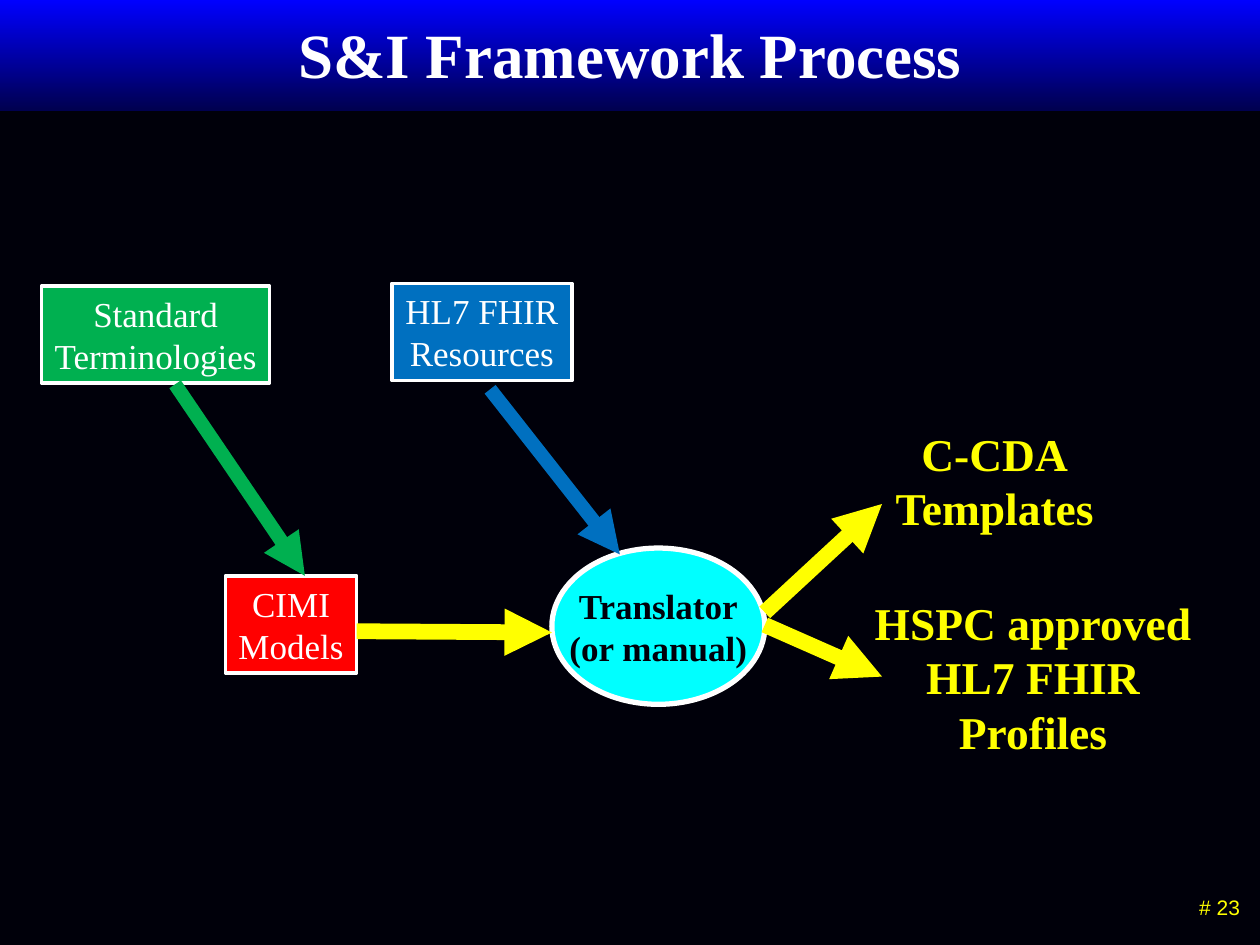
"""Builds the S&I Framework Process slide."""
from lxml import etree
from pptx import Presentation
from pptx.dml.color import RGBColor
from pptx.enum.shapes import MSO_CONNECTOR, MSO_SHAPE
from pptx.enum.text import MSO_ANCHOR, MSO_AUTO_SIZE, PP_ALIGN
from pptx.oxml.ns import qn
from pptx.util import Inches, Pt

RECTANGLE, ELLIPSE = MSO_SHAPE.RECTANGLE, MSO_SHAPE.OVAL
STRAIGHT = MSO_CONNECTOR.STRAIGHT
TOP, MIDDLE = MSO_ANCHOR.TOP, MSO_ANCHOR.MIDDLE
CENTER, RIGHT = PP_ALIGN.CENTER, PP_ALIGN.RIGHT
NO_AUTOFIT = MSO_AUTO_SIZE.NONE
TITLE_ONLY = 5

SERIF, SANS = "Times New Roman", "Arial"
NIGHT, NAVY, ROYAL = "00000A", "00004F", "0000FF"
WHITE, YELLOW, CYAN = "FFFFFF", "FFFF00", "00FFFF"
GREEN, BLUE, RED = "00B050", "0070C0", "FF0000"


def rgb(value):
    return RGBColor.from_string(value)


def inches(box):
    return [Inches(length) for length in box]


def write(frame, text, size, color, bold=False, font=SERIF, align=CENTER,
          anchor=TOP, wrap=False):
    frame.text = text
    frame.word_wrap = wrap
    frame.auto_size = NO_AUTOFIT
    frame.vertical_anchor = anchor
    for paragraph in frame.paragraphs:
        paragraph.alignment = align
        for run in paragraph.runs:
            run.font.name = font
            run.font.size = Pt(size)
            run.font.bold = bold
            run.font.color.rgb = rgb(color)


def add_banner(slide, box):
    banner = slide.shapes.add_shape(RECTANGLE, *inches(box))
    banner.shadow.inherit = False
    banner.line.fill.background()
    banner.fill.gradient()
    banner.fill.gradient_angle = 90
    for stop, color in zip(banner.fill.gradient_stops, (NAVY, ROYAL)):
        stop.color.rgb = rgb(color)
    slide.shapes.title._element.addprevious(banner._element)


def set_title(slide, box, text):
    title = slide.shapes.title
    title.left, title.top, title.width, title.height = inches(box)
    write(title.text_frame, text, 36, WHITE, bold=True, wrap=True)
    title.text_frame.margin_top = Inches(0.12)


def add_node(slide, kind, box, text, fill, outline=2, color=WHITE, bold=False,
             anchor=TOP):
    node = slide.shapes.add_shape(kind, *inches(box))
    node.shadow.inherit = False
    node.fill.solid()
    node.fill.fore_color.rgb = rgb(fill)
    node.line.color.rgb = rgb(WHITE)
    node.line.width = Pt(outline)
    write(node.text_frame, text, 20, color, bold, anchor=anchor)


def add_label(slide, box, text, size=26, **style):
    label = slide.shapes.add_textbox(*inches(box))
    write(label.text_frame, text, size, YELLOW, **style)


def add_arrow(slide, start, end, color, width):
    arrow = slide.shapes.add_connector(STRAIGHT, *inches(start + end))
    arrow.line.color.rgb = rgb(color)
    arrow.line.width = Pt(width)
    etree.SubElement(arrow.line._get_or_add_ln(), qn("a:tailEnd"), type="triangle")
    etree.SubElement(arrow._element.spPr, qn("a:effectLst"))


def main():
    deck = Presentation()
    deck.slide_width, deck.slide_height = Inches(10), Inches(7.5)
    slide = deck.slides.add_slide(deck.slide_layouts[TITLE_ONLY])
    slide.background.fill.solid()
    slide.background.fill.fore_color.rgb = rgb(NIGHT)

    add_banner(slide, (0, 0, 10, 0.88))
    set_title(slide, (0.5, 0, 9, 0.94), "S&I Framework Process")
    add_label(slide, (8.9, 7.03, 1.04, 0.34), "# 23", 12, font=SANS,
              align=RIGHT, anchor=MIDDLE)

    for box, text, fill in (
        ((1.79, 4.57, 1.04, 0.77), "CIMI\nModels", RED),
        ((0.33, 2.27, 1.81, 0.77), "Standard\nTerminologies", GREEN),
        ((3.11, 2.25, 1.43, 0.77), "HL7 FHIR\nResources", BLUE),
    ):
        add_node(slide, RECTANGLE, box, text, fill)
    add_node(slide, ELLIPSE, (4.38, 4.35, 1.69, 1.24), "Translator\n(or manual)",
             CYAN, outline=3, color=NIGHT, bold=True, anchor=MIDDLE)

    add_label(slide, (7, 3.33, 1.79, 0.98), "C-CDA\nTemplates", bold=True)
    add_label(slide, (6.83, 4.67, 2.74, 1.41),
              "HSPC approved\nHL7 FHIR\nProfiles", bold=True)

    for start, end, color, width in (
        ((1.39, 3.05), (2.42, 4.57), GREEN, 8),
        ((3.89, 3.09), (4.92, 4.4), BLUE, 8),
        ((2.83, 5.01), (4.38, 5.02), YELLOW, 9),
        ((6.07, 4.96), (7, 5.37), YELLOW, 9),
        ((6.07, 4.86), (7, 4), YELLOW, 9),
    ):
        add_arrow(slide, start, end, color, width)

    deck.save("out.pptx")


if __name__ == "__main__":
    main()
